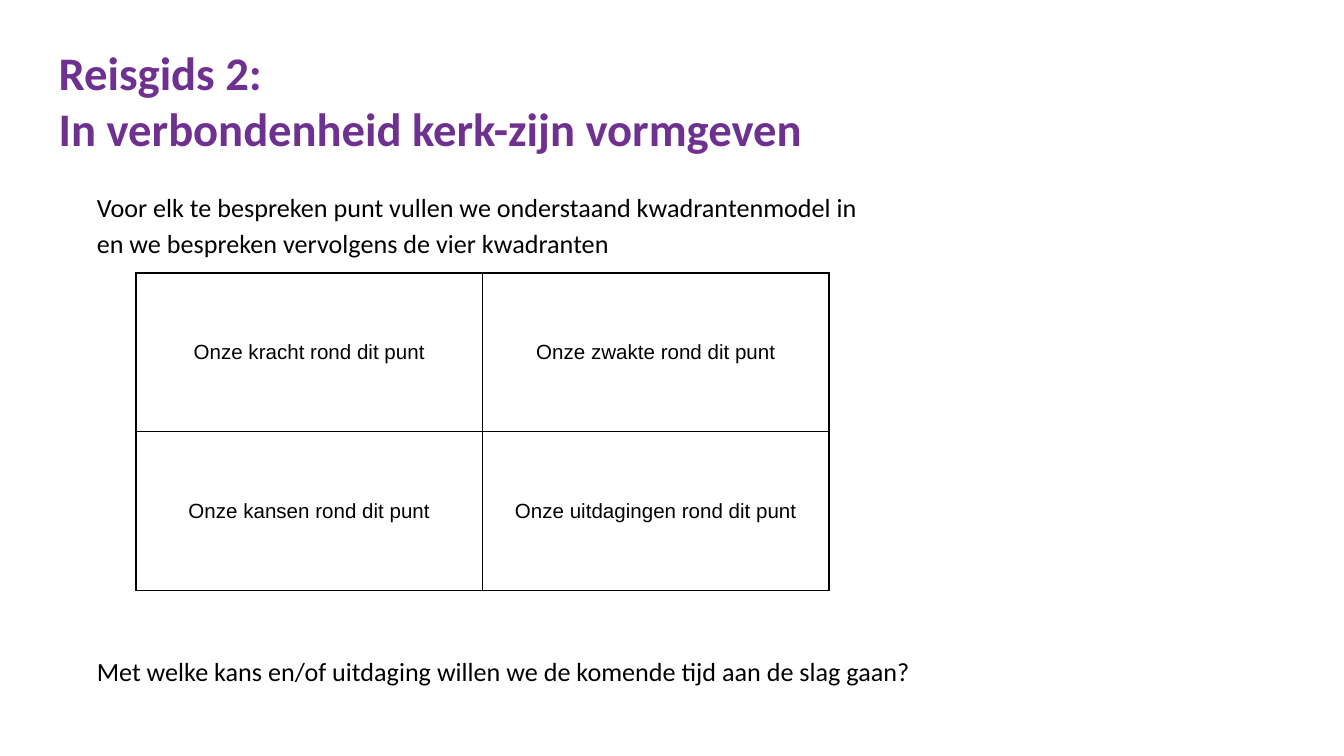
"""Builds the travel guide slide with its four-quadrant discussion model."""
from lxml import etree
from pptx import Presentation
from pptx.dml.color import RGBColor
from pptx.enum.text import MSO_ANCHOR, PP_ALIGN
from pptx.oxml.ns import qn
from pptx.util import Cm, Pt

CENTER = PP_ALIGN.CENTER
TOP, MIDDLE = MSO_ANCHOR.TOP, MSO_ANCHOR.MIDDLE
COLORS = {"title": "6F318F", "text": "000000", "border": "000000", "background": "FFFFFF"}
TITLE = ["Reisgids 2:", "In verbondenheid kerk-zijn vormgeven"]
INSTRUCTIONS = [
    "Voor elk te bespreken punt vullen we onderstaand kwadrantenmodel\u00a0in",
    "en we bespreken vervolgens de vier kwadranten",
    "Met welke kans en/of uitdaging willen we de komende tijd aan de slag gaan?",
]
QUADRANTS = [
    ["Onze kracht rond dit punt", "Onze zwakte rond dit punt"],
    ["Onze kansen rond dit punt", "Onze uitdagingen rond dit punt"],
]
COLUMN_WIDTH, ROW_HEIGHT = Cm(6.55), Cm(3)


def add_span(para, text, size, color, font="Calibri", bold=False):
    span = para.add_run()
    span.text = text
    span.font.name = font
    span.font.size = Pt(size)
    span.font.bold = bold
    span.font.color.rgb = RGBColor.from_string(COLORS[color])


def add_text(page, left, top, width, height, lines, size, color, bold=False):
    box = page.shapes.add_textbox(Cm(left), Cm(top), Cm(width), Cm(height))
    frame = box.text_frame
    frame.word_wrap = True
    frame.vertical_anchor = TOP
    frame.margin_left = frame.margin_right = Cm(0.25)
    frame.margin_top = frame.margin_bottom = Cm(0.25)
    for index, line in enumerate(lines):
        para = frame.add_paragraph() if index else frame.paragraphs[0]
        add_span(para, line, size, color, bold=bold)
    return frame.paragraphs


def add_border(cell):
    properties = cell._tc.get_or_add_tcPr()
    for position, side in enumerate(("lnL", "lnR", "lnT", "lnB")):
        line = etree.Element(qn(f"a:{side}"), w=str(Pt(1)))
        fill = etree.SubElement(line, qn("a:solidFill"))
        etree.SubElement(fill, qn("a:srgbClr"), val=COLORS["border"])
        properties.insert(position, line)


def add_quadrants(page, left, top):
    rows, columns = len(QUADRANTS), len(QUADRANTS[0])
    table = page.shapes.add_table(
        rows, columns, Cm(left), Cm(top), COLUMN_WIDTH * columns, ROW_HEIGHT * rows
    ).table
    table.first_row = table.horz_banding = False
    for row, labels in enumerate(QUADRANTS):
        for column, label in enumerate(labels):
            cell = table.cell(row, column)
            cell.fill.background()
            cell.vertical_anchor = MIDDLE
            cell.margin_left = cell.margin_right = Cm(0.18)
            cell.margin_top = cell.margin_bottom = Cm(0.18)
            add_border(cell)
            para = cell.text_frame.paragraphs[0]
            para.alignment = CENTER
            add_span(para, label, 11, "text", font="Arial")


def main():
    deck = Presentation()
    deck.slide_width, deck.slide_height = Cm(25.4), Cm(14.29)
    page = deck.slides.add_slide(deck.slide_layouts[6])
    page.background.fill.solid()
    page.background.fill.fore_color.rgb = RGBColor.from_string(COLORS["background"])
    add_text(page, 0.86, 0.58, 22.38, 1.6, TITLE, 25, "title", bold=True)
    paras = add_text(page, 1.2, 3.28, 23.67, 9.5, INSTRUCTIONS, 14, "text")
    for para in paras:
        para._p.get_or_add_pPr().set("marL", str(Cm(0.38)))
        para.line_spacing = 1.15
    paras[-1].space_before = Pt(210)
    add_quadrants(page, 2.57, 5.16)
    deck.save("out.pptx")


if __name__ == "__main__":
    main()
